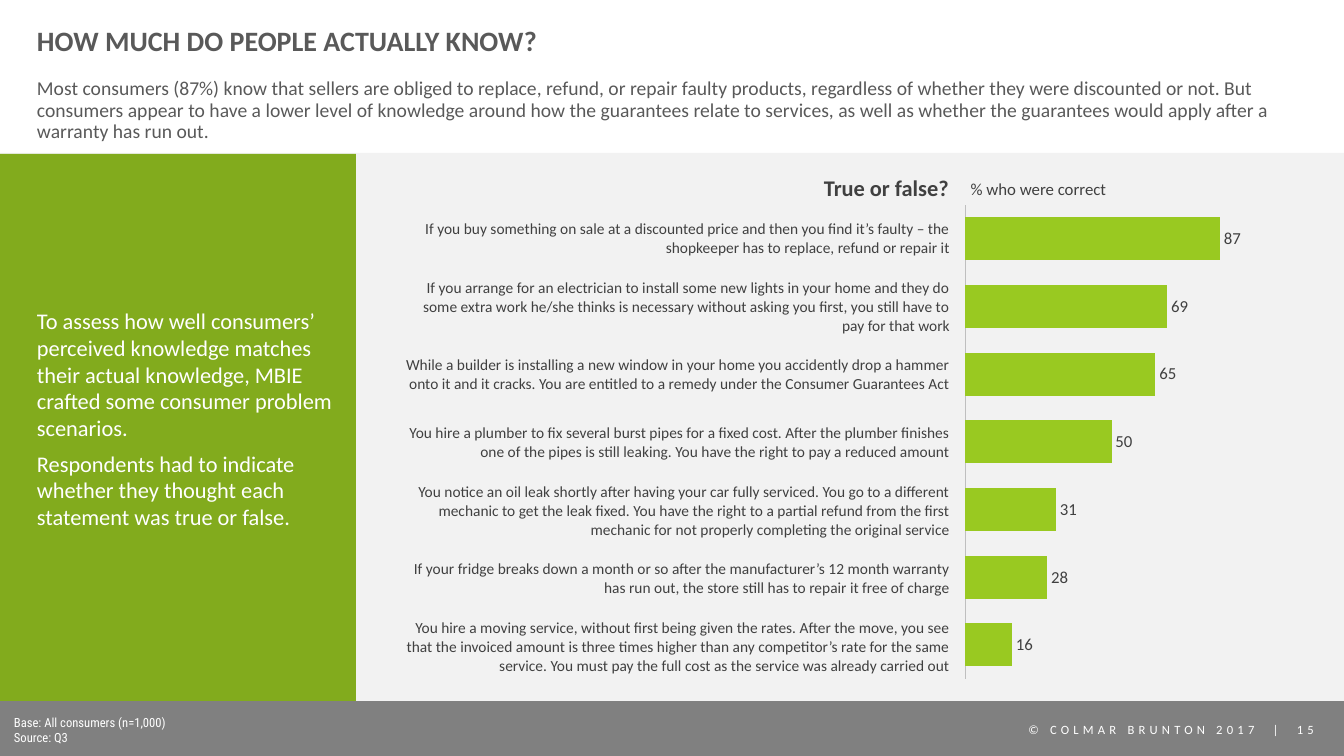
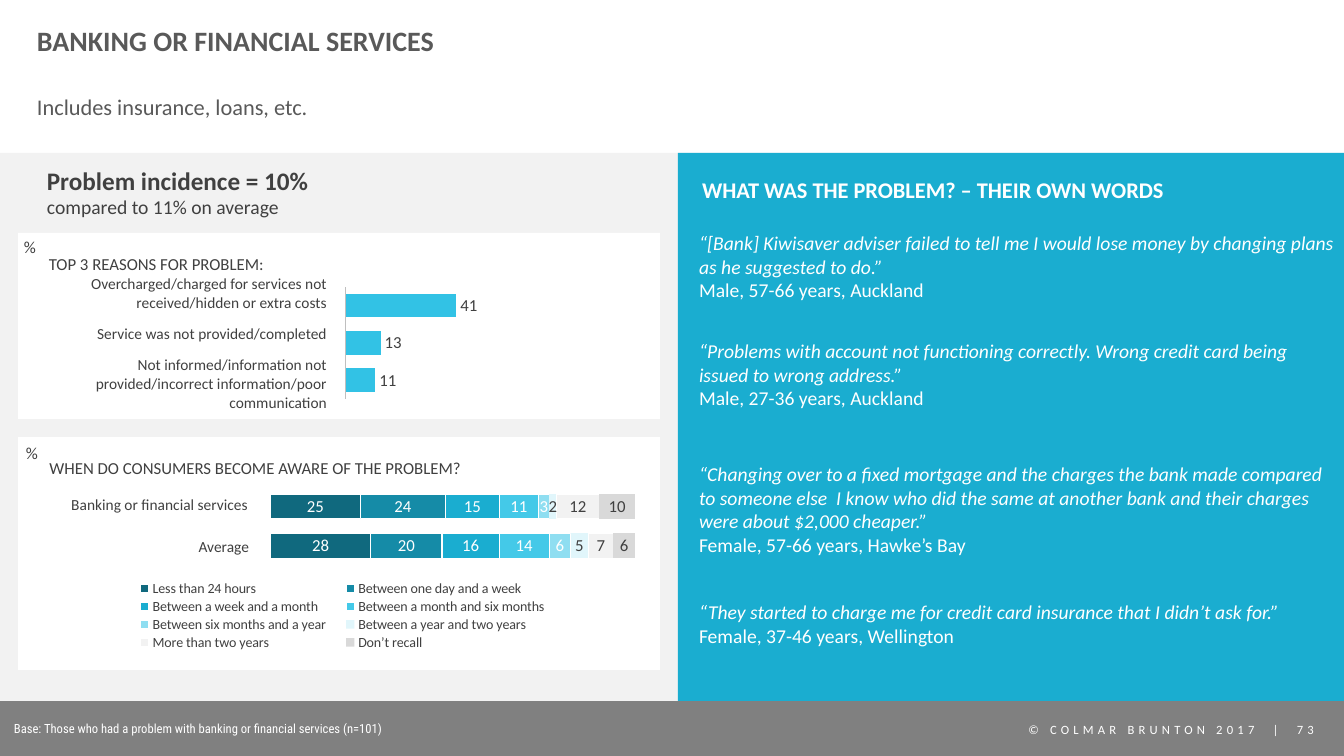
from lxml import etree
from pptx import Presentation
from pptx import util as u
from pptx.chart.data import CategoryChartData
from pptx.dml.color import RGBColor
from pptx.enum import chart as ch
from pptx.enum import shapes, text
from pptx.oxml.ns import qn

PX_PER_INCH = 100.8
W, H = 1344, 756
TOP, BAND_TOP = 153, 701
MARGIN = 37
COLORS = {
    "white": "FFFFFF", "title": "595959", "ink": "404040", "band": "808080",
    "panel": "F2F2F2", "axis": "BFBFBF", "green": "82AB1D", "lime": "99C921",
    "blue": "1AADD0", "sky": "32C2E5",
}
STACK = ["10697E", "158BA7", "1AADD0", "44C9E8", "8FDEF1", "E1F6FB", "F2F2F2", "D9D9D9"]
EDGED = {0, 1, 2, 3, 4, 6}
FIRST_DARK_LABEL = 5
NO_GRID_STYLE = "{2D5ABB26-0587-4C30-8999-92F81FD0307C}"
AL = text.PP_ALIGN

TITLE = {"size": 20, "bold": True, "color": "title"}
LABEL = {"size": 12, "color": "ink"}
SMALL = {"size": 11, "color": "ink"}
HEADING = {"size": 16, "bold": True, "color": "ink"}
NOTE = {"size": 9, "name": "Roboto Condensed", "color": "white"}
FOOTER = {"size": 9, "color": "white"}
QUOTE = {"size": 14, "color": "white"}

KNOWLEDGE = {
    "page": 15,
    "title": "HOW MUCH DO PEOPLE ACTUALLY KNOW?",
    "intro": "Most consumers (87%) know that sellers are obliged to replace, refund, or repair faulty products, regardless of whether they were discounted or not. But consumers appear to have a lower level of knowledge around how the guarantees relate to services, as well as whether the guarantees would apply after a warranty has run out.",
    "intro_box": (MARGIN, 79, 1278, 65),
    "intro_size": 14,
    "notes": ["Base: All consumers (n=1,000)", "Source: Q3"],
    "notes_box": (4, 710, 960, 40),
}
SCENARIOS = [
    ("If you buy something on sale at a discounted price and then you find it’s faulty – the shopkeeper has to replace, refund or repair it", 87),
    ("If you arrange for an electrician to install some new lights in your home and they do some extra work he/she thinks is necessary without asking you first, you still have to pay for that work", 69),
    ("While a builder is installing a new window in your home you accidently drop a hammer onto it and it cracks. You are entitled to a remedy under the Consumer Guarantees Act", 65),
    ("You hire a plumber to fix several burst pipes for a fixed cost. After the plumber finishes one of the pipes is still leaking. You have the right to pay a reduced amount", 50),
    ("You notice an oil leak shortly after having your car fully serviced. You go to a different mechanic to get the leak fixed. You have the right to a partial refund from the first mechanic for not properly completing the original service", 31),
    ("If your fridge breaks down a month or so after the manufacturer’s 12 month warranty has run out, the store still has to repair it free of charge", 28),
    ("You hire a moving service, without first being given the rates. After the move, you see that the invoiced amount is three times higher than any competitor’s rate for the same service. You must pay the full cost as the service was already carried out", 16),
]
METHOD = [
    "To assess how well consumers’ perceived knowledge matches their actual knowledge, MBIE crafted some consumer problem scenarios.",
    "Respondents had to indicate whether they thought each statement was true or false.",
]

BANKING = {
    "page": 73,
    "title": "BANKING OR FINANCIAL SERVICES",
    "intro": "Includes insurance, loans, etc.",
    "intro_box": (MARGIN, 96, 1278, 24),
    "intro_size": 16,
    "notes": ["Base: Those who had a problem with banking or financial services (n=101)"],
    "notes_box": (4, 716, 960, 25),
}
REASONS = [
    ("Overcharged/charged for services not received/hidden or extra costs", 41, 49),
    ("Service was not provided/completed", 13, 33),
    ("Not informed/information not provided/incorrect information/poor communication", 11, 61),
]
AWARENESS = [
    ("Less than 24 hours", 25, 28),
    ("Between one day and a week", 24, 20),
    ("Between a week and a month", 15, 16),
    ("Between a month and six months", 11, 14),
    ("Between six months and a year", 3, 6),
    ("Between a year and two years", 2, 5),
    ("More than two years", 12, 7),
    ("Don’t recall", 10, 6),
]
CARDS = [(18, 233, 642, 186), (18, 437, 642, 233)]
BANKING_LABELS = [
    ("TOP 3 REASONS FOR PROBLEM:", (37, 249, 239, 30), LABEL, AL.CENTER),
    ("WHEN DO CONSUMERS BECOME AWARE OF THE PROBLEM?", (37, 453, 437, 30), LABEL, AL.CENTER),
    ("%", (14, 232, 32, 30), LABEL, AL.CENTER),
    ("%", (16, 438, 32, 30), LABEL, AL.CENTER),
    ("Banking or financial services", (60, 490, 198, 29), SMALL, AL.RIGHT),
    ("Average", (186, 532, 73, 29), SMALL, AL.RIGHT),
    ("WHAT WAS THE PROBLEM? – THEIR OWN WORDS", (689, 171, 488, 37),
     {**HEADING, "color": "white"}, AL.CENTER),
]
QUOTES = [
    (231, "“[Bank] Kiwisaver adviser failed to tell me I would lose money by changing plans as he suggested to do.”", "Male, 57-66 years, Auckland"),
    (339, "“Problems with account not functioning correctly. Wrong credit card being issued to wrong address.”", "Male, 27-36 years, Auckland"),
    (462, "“Changing over to a fixed mortgage and the charges the bank made compared to someone else  I know who did the same at another bank and their charges were about $2,000 cheaper.”", "Female, 57-66 years, Hawke’s Bay"),
    (600, "“They started to charge me for credit card insurance that I didn’t ask for.”", "Female, 37-46 years, Wellington"),
]


def px(n):
    return u.Emu(round(n * 914400 / PX_PER_INCH))


def place(box):
    return [px(n) for n in box]


def rgb(color):
    return RGBColor.from_string(COLORS.get(color, color))


def style(font, fmt):
    for key, value in {"name": "Calibri", **fmt}.items():
        if key == "color":
            font.color.rgb = rgb(value)
        else:
            setattr(font, key, u.Pt(value) if key == "size" else value)


def write(tf, paras, align=AL.LEFT, gap=0, spacing=None):
    for i, (words, fmt) in enumerate(paras):
        p = tf.paragraphs[0] if i == 0 else tf.add_paragraph()
        p.alignment = align
        p.space_before = u.Pt(gap if i else 0)
        if spacing:
            p.line_spacing = spacing
        r = p.add_run()
        r.text = words
        style(r.font, fmt)


def no_inset(target):
    for side in ("left", "top", "right", "bottom"):
        setattr(target, f"margin_{side}", 0)


def add_text(s, box, paras, wrap=True, inset=True, **layout):
    sp = s.shapes.add_textbox(*place(box))
    tf = sp.text_frame
    tf.word_wrap = wrap
    tf.auto_size = text.MSO_AUTO_SIZE.SHAPE_TO_FIT_TEXT if inset else text.MSO_AUTO_SIZE.NONE
    if not inset:
        no_inset(tf)
    write(tf, paras, **layout)
    return sp


def add_rect(s, box, color):
    sp = s.shapes.add_shape(shapes.MSO_SHAPE.RECTANGLE, *place(box))
    sp.shadow.inherit = False
    sp.fill.solid()
    sp.fill.fore_color.rgb = rgb(color)
    sp.line.fill.background()


def fill_placeholder(sp, box, words, fmt, anchor):
    sp.left, sp.top, sp.width, sp.height = place(box)
    tf = sp.text_frame
    tf.word_wrap = True
    tf.auto_size = text.MSO_AUTO_SIZE.NONE
    tf.vertical_anchor = anchor
    no_inset(tf)
    pPr = tf.paragraphs[0]._p.get_or_add_pPr()
    pPr.set("marL", "0")
    pPr.set("indent", "0")
    etree.SubElement(pPr, qn("a:buNone"))
    write(tf, [(words, fmt)], spacing=0.9)


def add_base(prs, c):
    s = prs.slides.add_slide(prs.slide_layouts[1])
    add_rect(s, (0, BAND_TOP, W, H - BAND_TOP), "band")
    add_rect(s, (0, TOP, W, BAND_TOP - TOP), "panel")
    sp = add_text(s, (998, 717, 346, 25), [(f"© COLMAR BRUNTON 2017  |  {c['page']}", FOOTER)],
                  align=AL.CENTER)
    sp.text_frame.paragraphs[0].runs[0]._r.get_or_add_rPr().set("spc", "300")
    fill_placeholder(s.shapes.title, (MARGIN, 11, 1086, 62), c["title"], TITLE,
                     text.MSO_ANCHOR.MIDDLE)
    fill_placeholder(s.placeholders[1], c["intro_box"], c["intro"],
                     {"size": c["intro_size"], "color": "title"}, text.MSO_ANCHOR.TOP)
    add_text(s, c["notes_box"], [(n, NOTE) for n in c["notes"]])
    return s


def add_statements(s, left, top, width, rows, inset=True):
    box = (left, top, width, sum(h for _, h in rows))
    tbl = s.shapes.add_table(len(rows), 1, *place(box)).table
    tbl.first_row = tbl.horz_banding = False
    tbl._tbl.tblPr.find(qn("a:tableStyleId")).text = NO_GRID_STYLE
    for i, (words, height) in enumerate(rows):
        tbl.rows[i].height = px(height)
        cell = tbl.cell(i, 0)
        cell.fill.background()
        cell.vertical_anchor = text.MSO_ANCHOR.MIDDLE
        if not inset:
            no_inset(cell)
        write(cell.text_frame, [(words, SMALL)], align=AL.RIGHT)


def manual_layout(parent, index, frame, inner=False):
    for old in parent.findall(qn("c:layout")):
        parent.remove(old)
    layout = etree.Element(qn("c:layout"))
    manual = etree.SubElement(layout, qn("c:manualLayout"))
    values = [("layoutTarget", "inner")] if inner else []
    values += [("xMode", "edge"), ("yMode", "edge"), *zip("xywh", frame)]
    for tag, value in values:
        etree.SubElement(manual, qn(f"c:{tag}")).set("val", str(value))
    parent.insert(index, layout)


def add_bars(s, kind, box, cats, series, plot_frame, gap, top_value):
    data = CategoryChartData(number_format="0")
    data.categories = cats
    for name, values in series:
        data.add_series(name, values)
    chart = s.shapes.add_chart(kind, *place(box), data).chart
    chart.has_title = chart.has_legend = False
    style(chart.font, {"size": 10, "color": "ink"})
    plot = chart.plots[0]
    plot.vary_by_categories = False
    plot.gap_width = gap
    val = chart.value_axis
    val.has_major_gridlines = False
    val.minimum_scale, val.maximum_scale = 0, top_value
    val.visible = False
    manual_layout(chart._chartSpace.chart.plotArea, 0, plot_frame, inner=True)
    return chart


def paint(ser, color, label_color, position):
    ser.invert_if_negative = False
    ser.format.fill.solid()
    ser.format.fill.fore_color.rgb = rgb(color)
    labels = ser.data_labels
    labels.show_value = True
    labels.position = position
    style(labels.font, {"size": 12, "color": label_color})


def add_ranked(s, box, values, color, plot_frame):
    cats = [str(i + 1) for i in range(len(values))]
    chart = add_bars(s, ch.XL_CHART_TYPE.BAR_CLUSTERED, box, cats, [("Series 1", values)],
                     plot_frame, 57, 100)
    axis = chart.category_axis
    axis.reverse_order = True
    axis.has_major_gridlines = False
    axis.tick_label_position = ch.XL_TICK_LABEL_POSITION.NONE
    axis.major_tick_mark = axis.minor_tick_mark = ch.XL_TICK_MARK.NONE
    axis.format.line.color.rgb = rgb("axis")
    axis.format.line.width = u.Pt(0.75)
    paint(chart.plots[0].series[0], color, "ink", ch.XL_LABEL_POSITION.OUTSIDE_END)


def add_stack(s, box, series, plot_frame, legend_frame=None):
    chart = add_bars(s, ch.XL_CHART_TYPE.BAR_STACKED_100, box, ["1"], series, plot_frame, 89, 1)
    chart.category_axis.visible = False
    chart.plots[0].overlap = 100
    for i, ser in enumerate(chart.plots[0].series):
        paint(ser, STACK[i], "white" if i < FIRST_DARK_LABEL else "ink",
              ch.XL_LABEL_POSITION.CENTER)
        if i in EDGED:
            ser.format.line.color.rgb = rgb("white")
            ser.format.line.width = u.Pt(0.75)
    if legend_frame:
        chart.has_legend = True
        legend = chart.legend
        legend.position = ch.XL_LEGEND_POSITION.RIGHT
        legend.include_in_layout = False
        style(legend.font, {"size": 10, "color": "ink"})
        manual_layout(legend._element, 1, legend_frame)


def knowledge_slide(prs):
    s = add_base(prs, KNOWLEDGE)
    add_rect(s, (0, TOP + 1, 356, BAND_TOP - TOP - 1), "green")
    add_text(s, (MARGIN, 307, 310, 297), [(m, {"size": 16, "color": "white"}) for m in METHOD],
             inset=False, gap=6)
    add_text(s, (814, 169, 147, 37), [("True or false?", HEADING)], wrap=False)
    add_text(s, (958, 174, 161, 30), [("% who were correct", LABEL)], wrap=False, align=AL.CENTER)
    add_statements(s, 401, 205, 549, [(words, 68) for words, _ in SCENARIOS], inset=False)
    add_ranked(s, (960, 194, 303, 503), [v for _, v in SCENARIOS], "lime",
               (0.017, 0.022, 0.967, 0.942))


def banking_slide(prs):
    s = add_base(prs, BANKING)
    for card in CARDS:
        add_rect(s, card, "white")
    add_rect(s, (678, TOP, W - 678, BAND_TOP - TOP), "blue")
    add_text(s, (MARGIN, 160, 289, 65),
             [("Problem incidence = 10%", {**HEADING, "size": 18}),
              ("compared to 11% on average", {"size": 14, "color": "ink"})])
    add_statements(s, 19, 269, 318, [(words, h) for words, _, h in REASONS])
    add_ranked(s, (341, 283, 279, 120), [v for _, v, _ in REASONS], "sky",
               (0.017, 0.033, 0.967, 0.934))
    add_stack(s, (18, 461, 640, 140), [(n, [v]) for n, v, _ in AWARENESS],
              (0.395, 0.159, 0.569, 0.334))
    add_stack(s, (16, 514, 640, 140), [(n, [v]) for n, _, v in AWARENESS],
              (0.398, 0.06, 0.569, 0.334), (0.17, 0.46, 0.68, 0.53))
    for words, box, fmt, align in BANKING_LABELS:
        add_text(s, box, [(words, fmt)], wrap=False, align=align)
    for top, quote, speaker in QUOTES:
        add_text(s, (699, top, 638, 100), [(quote, {**QUOTE, "italic": True}), (speaker, QUOTE)],
                 inset=False)


def main():
    prs = Presentation()
    prs.slide_width, prs.slide_height = px(W), px(H)
    knowledge_slide(prs)
    banking_slide(prs)
    prs.save("out.pptx")


if __name__ == "__main__":
    main()
